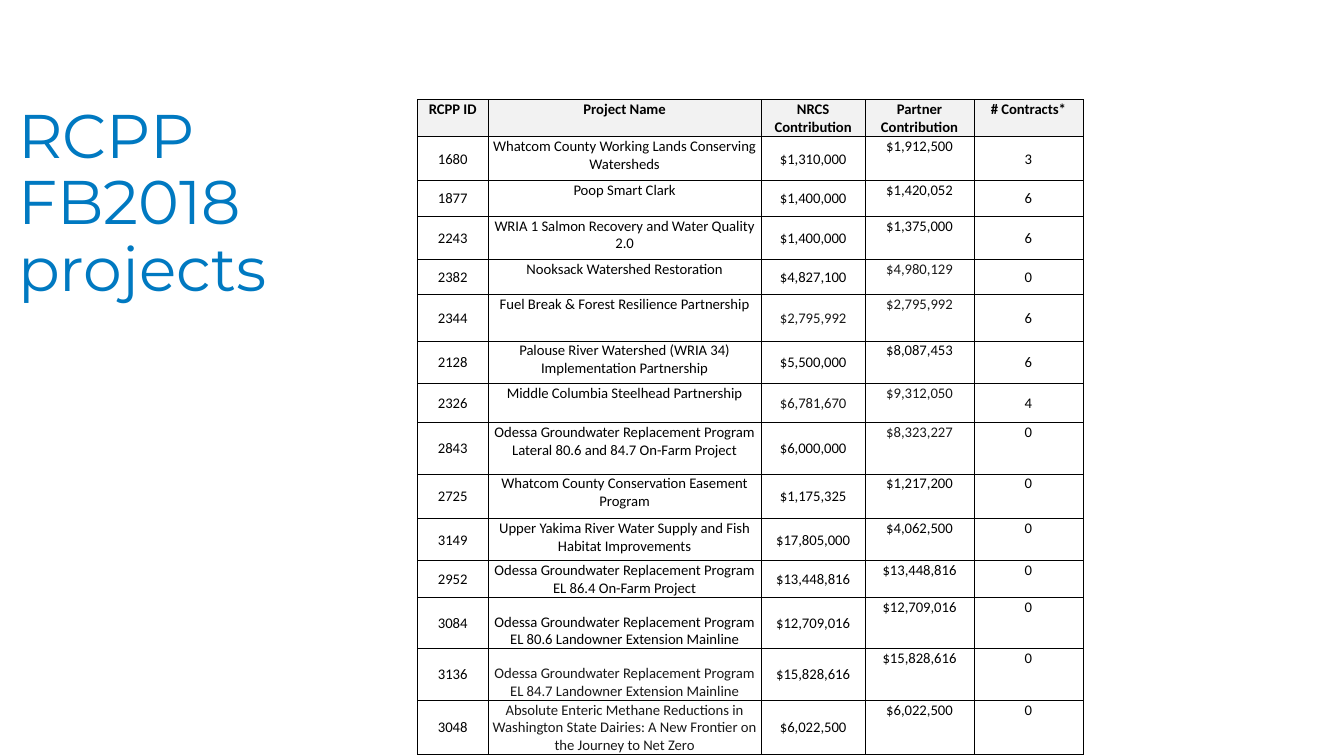
from lxml import etree
from pptx import Presentation
from pptx.dml.color import RGBColor
from pptx.enum import text
from pptx.oxml import ns
from pptx.util import Inches, Pt

BLUE = RGBColor(0x00, 0x79, 0xC1)
BLACK = RGBColor(0x00, 0x00, 0x00)
SOFT_BLACK = RGBColor(0x18, 0x18, 0x18)
HEADER_GREY = RGBColor(0xF2, 0xF2, 0xF2)

TOP = text.MSO_ANCHOR.TOP
MIDDLE = text.MSO_ANCHOR.MIDDLE
BOTTOM = text.MSO_ANCHOR.BOTTOM

HEADINGS = ("RCPP ID", "Project Name", "NRCS Contribution",
            "Partner Contribution", "# Contracts*")
COLUMN_WIDTHS = (0.7, 2.71, 1.03, 1.08, 1.08)
HEADER_HEIGHT = 0.35
ID, NAME, NRCS, PARTNER, CONTRACTS = range(5)

# Row height, then RCPP ID, name, NRCS and partner contributions, contracts
PROJECTS = (
    (0.44, "1680", "Whatcom County Working Lands Conserving Watersheds",
     "$1,310,000", "$1,912,500", "3"),
    (0.35, "1877", "Poop Smart Clark", "$1,400,000", "$1,420,052", "6"),
    (0.43, "2243", "WRIA 1 Salmon Recovery and Water Quality 2.0",
     "$1,400,000", "$1,375,000", "6"),
    (0.35, "2382", "Nooksack Watershed Restoration",
     "$4,827,100", "$4,980,129", "0"),
    (0.46, "2344", "Fuel Break & Forest Resilience Partnership",
     "$2,795,992", "$2,795,992", "6"),
    (0.42, "2128", "Palouse River Watershed (WRIA 34) Implementation Partnership",
     "$5,500,000", "$8,087,453", "6"),
    (0.39, "2326", "Middle Columbia Steelhead Partnership",
     "$6,781,670", "$9,312,050", "4"),
    (0.51, "2843", "Odessa Groundwater Replacement Program "
     "Lateral 80.6 and 84.7 On-Farm Project", "$6,000,000", "$8,323,227", "0"),
    (0.44, "2725", "Whatcom County Conservation Easement Program",
     "$1,175,325", "$1,217,200", "0"),
    (0.42, "3149", "Upper Yakima River Water Supply and Fish Habitat Improvements",
     "$17,805,000", "$4,062,500", "0"),
    (0.35, "2952", "Odessa Groundwater Replacement Program EL 86.4 On-Farm Project",
     "$13,448,816", "$13,448,816", "0"),
    (0.51, "3084", "Odessa Groundwater Replacement Program "
     "EL 80.6 Landowner Extension Mainline", "$12,709,016", "$12,709,016", "0"),
    (0.51, "3136", "Odessa Groundwater Replacement Program "
     "EL 84.7 Landowner Extension Mainline", "$15,828,616", "$15,828,616", "0"),
    (0.51, "3048", "Absolute Enteric Methane Reductions in Washington State "
     "Dairies: A New Frontier on the Journey to Net Zero",
     "$6,022,500", "$6,022,500", "0"),
)
SOFT_CELLS = {("2382", PARTNER), ("2344", NRCS), ("2344", PARTNER),
              ("2326", NRCS), ("2326", PARTNER), ("2843", PARTNER),
              ("3136", NAME), ("3048", NAME)}
FIRST_TOP_CONTRACTS = 7   # contract counts sit at the top from this project on
FIRST_BOTTOM_NAME = 10    # names sit at the bottom from this project on


def add_title(slide):
    title = slide.shapes.title
    title.left, title.top = Inches(0.08), Inches(0.99)
    title.width, title.height = Inches(3.15), Inches(0.88)
    frame = title.text_frame
    frame.text = "RCPP\vFB2018 projects"
    frame.word_wrap = True
    frame.auto_size = text.MSO_AUTO_SIZE.NONE
    frame.vertical_anchor = TOP
    heading = frame.paragraphs[0]
    heading.alignment = text.PP_ALIGN.LEFT
    heading.line_spacing = 0.9
    for run in heading.runs:
        run.font.name = "Montserrat"
        run.font.size = Pt(44)
        run.font.color.rgb = BLUE


def add_borders(cell):
    properties = cell._tc.get_or_add_tcPr()
    for side in ("a:lnL", "a:lnR", "a:lnT", "a:lnB"):
        line = etree.SubElement(properties, ns.qn(side), w=str(Pt(0.5)))
        fill = etree.SubElement(line, ns.qn("a:solidFill"))
        etree.SubElement(fill, ns.qn("a:srgbClr"), val=str(BLACK))


def fill_cell(cell, words, anchor, color=BLACK, header=False):
    cell.margin_left = cell.margin_right = cell.margin_top = Inches(0.01)
    cell.margin_bottom = 0
    cell.vertical_anchor = anchor
    add_borders(cell)
    if header:
        cell.fill.solid()
        cell.fill.fore_color.rgb = HEADER_GREY
    else:
        cell.fill.background()
    cell.text_frame.text = words
    paragraph = cell.text_frame.paragraphs[0]
    paragraph.alignment = text.PP_ALIGN.CENTER
    font = paragraph.runs[0].font
    font.name, font.size, font.bold = "Calibri", Pt(10.5), header
    font.color.rgb = color


def anchor_for(project, column):
    if column == NAME:
        return BOTTOM if project >= FIRST_BOTTOM_NAME else TOP
    if column == CONTRACTS:
        return TOP if project >= FIRST_TOP_CONTRACTS else MIDDLE
    return TOP if column == PARTNER else MIDDLE


def add_projects_table(slide):
    heights = [HEADER_HEIGHT] + [project[0] for project in PROJECTS]
    projects = slide.shapes.add_table(
        len(heights), len(HEADINGS), Inches(4.14), Inches(0.99),
        Inches(sum(COLUMN_WIDTHS)), Inches(sum(heights))).table
    projects.first_row = projects.horz_banding = False
    for column, width in zip(projects.columns, COLUMN_WIDTHS):
        column.width = Inches(width)
    for row, height in zip(projects.rows, heights):
        row.height = Inches(height)

    # Header row
    for column, heading in enumerate(HEADINGS):
        fill_cell(projects.cell(0, column), heading, TOP, header=True)

    # One row per project
    for index, (_, *values) in enumerate(PROJECTS):
        for column, value in enumerate(values):
            color = SOFT_BLACK if (values[ID], column) in SOFT_CELLS else BLACK
            fill_cell(projects.cell(index + 1, column), value,
                      anchor_for(index, column), color)


def main():
    deck = Presentation()
    deck.slide_width, deck.slide_height = Inches(13.33), Inches(7.5)
    slide = deck.slides.add_slide(deck.slide_layouts[5])  # Title Only
    add_title(slide)
    add_projects_table(slide)
    deck.save("out.pptx")


if __name__ == "__main__":
    main()
